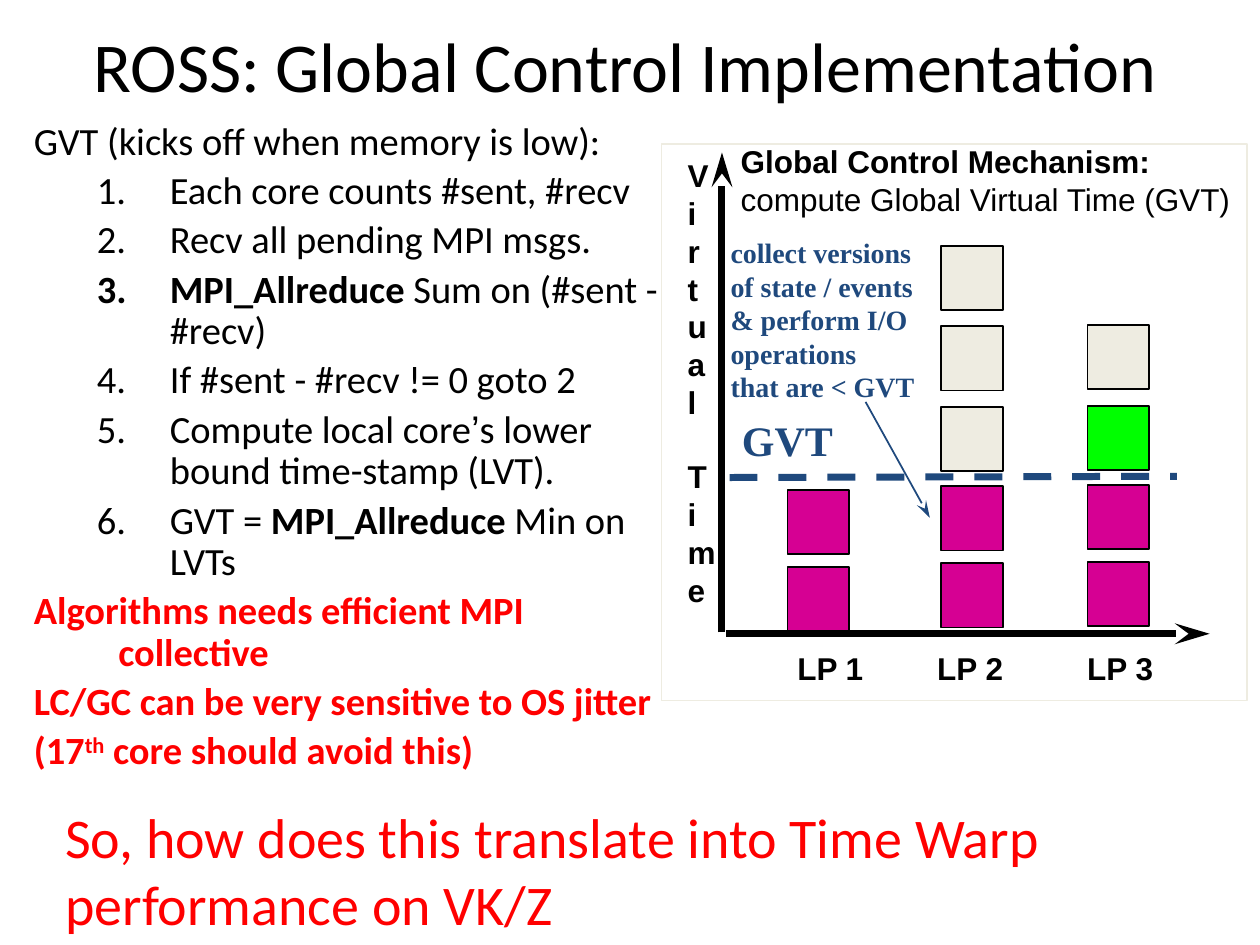
from lxml import etree
from pptx import Presentation, util as u
from pptx.dml.color import RGBColor
from pptx.enum import dml, shapes, text
from pptx.oxml.ns import qn

BLACK = RGBColor(0, 0, 0)
WHITE = RGBColor(255, 255, 255)
RED = RGBColor(255, 0, 0)
GREEN = RGBColor(0, 255, 0)
CREAM = RGBColor(0xEE, 0xEC, 0xE1)
MAGENTA = RGBColor(0xD6, 0, 0x93)
NAVY = RGBColor(0x1F, 0x49, 0x7D)
SANS, LABEL, SERIF = "Calibri", "Arial", "Times New Roman"

# Content: runs are (text, overrides)
BOLD = {"bold": True}
ALERT = {"bold": True, "color": RED}
TITLE = "ROSS: Global Control Implementation"
INTRO = [[("GVT (kicks off when memory is low):", {})]]
STEPS = [
    [("Each core counts #sent, #recv", {})],
    [("Recv all pending MPI msgs.", {})],
    [("MPI_Allreduce", BOLD), (" Sum on (#sent - #recv)", {})],
    [("If #sent - #recv != 0 goto 2", {})],
    [("Compute local core", {}), ("’", {"font": LABEL}),
     ("s lower bound time-stamp (LVT).", {})],
    [("GVT = ", {}), ("MPI_Allreduce", BOLD), (" Min on LVTs", {})],
]
WARNINGS = [
    [("Algorithms needs efficient MPI collective", ALERT)],
    [("LC/GC can be very sensitive to OS jitter", ALERT)],
    [("(17", ALERT), ("th", {**ALERT, "raised": True}),
     (" core should avoid this)", ALERT)],
]
QUESTION = "So, how does this translate into Time Warp performance on VK/Z"
HEADING = [[("Global Control Mechanism:", BOLD)],
           [("compute Global Virtual Time (GVT)", {})]]
AXIS_WORDS = ["Virtual", "Time"]
NOTE = ["collect versions", "of state / events", "& perform I/O",
        "operations", "that are < GVT"]
# Stacks: label, label left, squares left, vertical shift, colours bottom up
STACKS = [
    ("LP 1", 6.23, 6.25, 0.03, [MAGENTA] * 2),
    ("LP 2", 7.34, 7.47, 0, [MAGENTA] * 2 + [CREAM] * 3),
    ("LP 3", 8.53, 8.63, -0.01, [MAGENTA] * 2 + [GREEN, CREAM]),
]
ROW_TOPS = [4.47, 3.86, 3.23, 2.59, 1.95]
# Lines: start, end, colour, width, arrow, dashed
LINES = [
    ((5.76, 5.03), (9.6, 5.03), BLACK, 4, True, False),
    ((5.73, 5.02), (5.73, 1.21), BLACK, 4, True, False),
    ((5.79, 3.79), (9.34, 3.78), NAVY, 4, False, True),
    ((6.87, 3.19), (7.38, 4.11), NAVY, 1, True, False),
]


def add_span(para, wording, size, font=SANS, color=BLACK, bold=False, raised=False):
    span = para.add_run()
    span.text = wording
    span.font.size = u.Pt(size)
    span.font.name = font
    span.font.color.rgb = color
    span.font.bold = bold
    if raised:
        span.font._element.set("baseline", "30000")


def add_text(page, place, lines, wrap=False, **style):
    box = page.shapes.add_textbox(*map(u.Inches, place))
    frame = box.text_frame
    frame.word_wrap = wrap
    for index, line in enumerate(lines):
        para = frame.paragraphs[0] if index == 0 else frame.add_paragraph()
        for wording, changes in line:
            add_span(para, wording, **{**style, **changes})
    return frame.paragraphs


def add_rect(page, place, fill, line):
    rect = page.shapes.add_shape(shapes.MSO_SHAPE.RECTANGLE, *map(u.Inches, place))
    rect.shadow.inherit = False
    rect.fill.solid()
    rect.fill.fore_color.rgb = fill
    rect.line.color.rgb = line
    rect.line.width = u.Pt(1)


def add_line(page, start, end, color, width, arrow, dashed):
    line = page.shapes.add_connector(
        shapes.MSO_CONNECTOR.STRAIGHT, *map(u.Inches, start + end))
    line.line.color.rgb = color
    line.line.width = u.Pt(width)
    if dashed:
        line.line.dash_style = dml.MSO_LINE.DASH
    if arrow:
        etree.SubElement(line.line._get_or_add_ln(), qn("a:tailEnd"),
                         type="stealth", w="med", len="lg")
    etree.SubElement(line._element.spPr, qn("a:effectLst"))


def indent(para, left, hanging, numbered):
    props = para._p.get_or_add_pPr()
    props.set("marL", str(u.Inches(left)))
    props.set("indent", str(-u.Inches(hanging)))
    para.line_spacing = 0.9
    para.space_before = u.Pt(4.4)
    if numbered:
        etree.SubElement(props, qn("a:buFont"), typeface="+mj-lt")
        etree.SubElement(props, qn("a:buAutoNum"), type="arabicPeriod")


def main():
    deck = Presentation()
    deck.slide_width, deck.slide_height = u.Inches(10), u.Inches(7.5)
    page = deck.slides.add_slide(deck.slide_layouts[5])

    # Title
    title = page.shapes.title
    title.left, title.top, title.width, title.height = map(
        u.Inches, (0.17, 0, 9.58, 1.03))
    frame = title.text_frame
    frame.vertical_anchor = text.MSO_ANCHOR.MIDDLE
    frame.paragraphs[0].alignment = text.PP_ALIGN.CENTER
    add_span(frame.paragraphs[0], TITLE, 40)

    # Algorithm steps
    paras = add_text(page, (0.17, 0.92, 5.25, 4.92), INTRO + STEPS + WARNINGS,
                     wrap=True, size=22)
    for index, para in enumerate(paras):
        step = len(INTRO) <= index < len(INTRO) + len(STEPS)
        indent(para, *((1.08, 0.58) if step else (0.67, 0.67)), step)

    # Chart panel and heading
    add_rect(page, (5.25, 1.14, 4.65, 4.42), WHITE, CREAM)
    add_text(page, (5.78, 1.08, 4.11, 0.7), HEADING, size=18, font=LABEL)

    # Stacks of events per logical process
    for name, label_left, left, shift, colors in STACKS:
        for top, color in zip(ROW_TOPS, colors):
            add_rect(page, (left, top + shift, 0.49, 0.51), color, BLACK)
        add_text(page, (label_left, 5.1, 0.73, 0.4), [[(name, BOLD)]],
                 size=18, font=LABEL)

    # Axes, GVT line and pointer
    for line in LINES:
        add_line(page, *line)

    # Vertical axis name, one letter a line
    letters = [[(letter, BOLD)] for letter in "".join(AXIS_WORDS)]
    paras = add_text(page, (5.36, 1.19, 0.42, 3.7), letters, size=18, font=LABEL)
    paras[len(AXIS_WORDS[0])].space_before = u.Pt(21)

    # Annotations
    add_text(page, (5.79, 3.24, 0.92, 0.5), [[("GVT", BOLD)]],
             size=24, font=SERIF, color=NAVY)
    add_text(page, (5.7, 1.82, 1.67, 1.44), [[(line, BOLD)] for line in NOTE],
             size=16, font=SERIF, color=NAVY)

    # Closing question
    add_text(page, (0.42, 6.32, 9.33, 1.18), [[(QUESTION, {})]],
             wrap=True, size=32, color=RED)
    deck.save("out.pptx")


if __name__ == "__main__":
    main()
